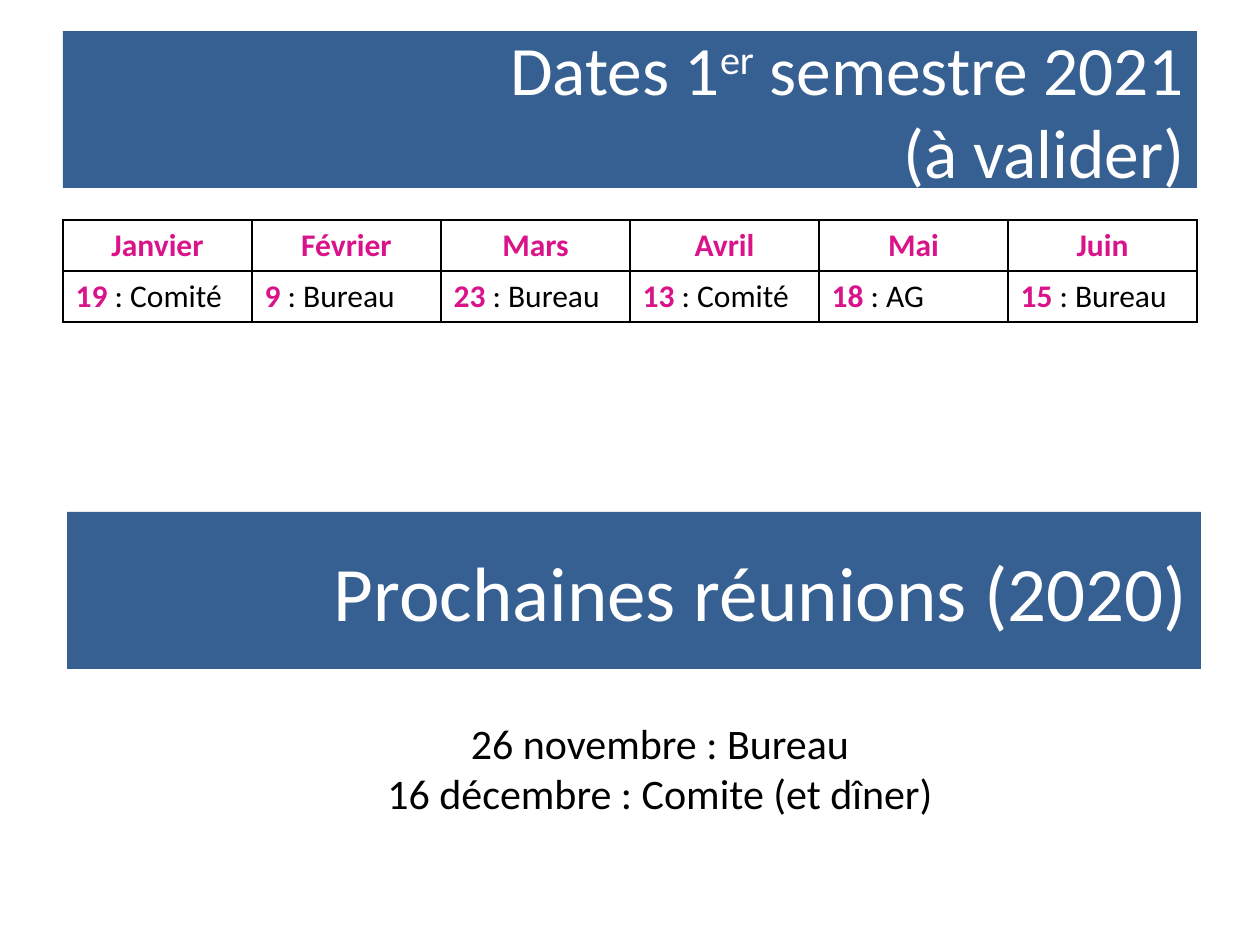
from dataclasses import dataclass

from lxml.etree import SubElement
from pptx import Presentation
from pptx.dml.color import RGBColor
from pptx.enum.shapes import MSO_SHAPE as Shape
from pptx.enum.text import MSO_ANCHOR as Anchor, MSO_AUTO_SIZE as AutoSize, PP_ALIGN as Align
from pptx.oxml.ns import qn
from pptx.util import Emu, Pt

PX_PER_INCH = 126


def px(length):
    return Emu(round(length * 914400 / PX_PER_INCH))


@dataclass(frozen=True)
class Theme:
    font: str = "Calibri"
    band: str = "376092"
    light: str = "FFFFFF"
    dark: str = "000000"
    accent: str = "D9138A"
    title: float = 44
    subtitle: float = 39.6
    body: float = 24
    table: float = 18
    border: float = 1


class SlideBuilder:
    def __init__(self, slide, theme):
        self.slide = slide
        self.theme = theme

    def format_run(self, run, size, color, bold=False):
        font = run.font
        font.name, font.size, font.bold = self.theme.font, Pt(size), bold
        font.color.rgb = RGBColor.from_string(color)

    def format_band(self, shape, size):
        """Blue band with white text set to the right."""
        shape.fill.solid()
        shape.fill.fore_color.rgb = RGBColor.from_string(self.theme.band)
        shape.line.fill.background()
        frame = shape.text_frame
        frame.word_wrap = True
        frame.auto_size = AutoSize.NONE
        frame.vertical_anchor = Anchor.MIDDLE
        for paragraph in frame.paragraphs:
            paragraph.alignment = Align.RIGHT
            for run in paragraph.runs:
                self.format_run(run, size, self.theme.light)

    def title(self, text, left, top, width, height):
        shape = self.slide.shapes.title
        shape.left, shape.top, shape.width, shape.height = map(px, (left, top, width, height))
        shape.text_frame.text = text
        self.format_band(shape, self.theme.title)

    def date_band(self, before, superscript, after, second_line, left, top, width, height):
        shape = self.slide.shapes.add_shape(Shape.RECTANGLE, *map(px, (left, top, width, height)))
        shape.shadow.inherit = False
        paragraph = shape.text_frame.paragraphs[0]
        for text in (before, superscript, after):
            paragraph.add_run().text = text
        paragraph.add_line_break()
        paragraph.add_run().text = second_line
        self.format_band(shape, self.theme.subtitle)
        paragraph.runs[1].font._element.set("baseline", "30000")

    def cell_borders(self, cell):
        properties = cell._tc.get_or_add_tcPr()
        for position, side in enumerate(("lnL", "lnR", "lnT", "lnB")):
            line = SubElement(properties, qn(f"a:{side}"), w=str(Pt(self.theme.border)))
            fill = SubElement(line, qn("a:solidFill"))
            SubElement(fill, qn("a:srgbClr"), val=self.theme.dark)
            properties.insert(position, line)

    def calendar(self, meetings, left, top, column_width, row_height):
        theme = self.theme
        count = len(meetings)
        table = self.slide.shapes.add_table(
            2, count, px(left), px(top), px(column_width * count), px(row_height * 2)).table
        table.first_row = table.horz_banding = False
        for row in table.rows:
            row.height = px(row_height)
        for column, (month, day, event) in enumerate(meetings):
            table.columns[column].width = px(column_width)
            for row, texts in enumerate(((month,), (day, event))):
                cell = table.cell(row, column)
                cell.fill.background()
                self.cell_borders(cell)
                paragraph = cell.text_frame.paragraphs[0]
                paragraph.alignment = Align.LEFT if row else Align.CENTER
                for text, color in zip(texts, (theme.accent, theme.dark)):
                    run = paragraph.add_run()
                    run.text = text
                    self.format_run(run, theme.table, color, color == theme.accent)

    def text(self, lines, left, top, width, height):
        box = self.slide.shapes.add_textbox(*map(px, (left, top, width, height)))
        frame = box.text_frame
        frame.word_wrap = True
        frame.auto_size = AutoSize.SHAPE_TO_FIT_TEXT
        frame.text = "\n".join(lines)
        for paragraph in frame.paragraphs:
            paragraph.alignment = Align.CENTER
            self.format_run(paragraph.runs[0], self.theme.body, self.theme.dark)


def main():
    presentation = Presentation()
    presentation.slide_width, presentation.slide_height = px(1260), px(945)
    title_only = presentation.slide_layouts[5]
    builder = SlideBuilder(presentation.slides.add_slide(title_only), Theme())

    # Band above the upcoming meetings
    builder.title("Prochaines réunions (2020)", 67, 512, 1134, 157)

    # Calendar of the first half-year
    meetings = [
        ("Janvier", "19", " : Comité"),
        ("Février", "9", " : Bureau"),
        ("Mars", "23 ", ": Bureau"),
        ("Avril", "13", " : Comité"),
        ("Mai", "18", " : AG"),
        ("Juin", "15 ", ": Bureau"),
    ]
    builder.calendar(meetings, 63, 220, 189, 51)
    builder.date_band("Dates 1", "er", " semestre 2021", "(à valider)", 63, 31, 1134, 157)

    # Upcoming meetings
    builder.text(["26 novembre : Bureau", "16 décembre : Comite (et dîner)"], 273, 711, 774, 115)

    presentation.save("out.pptx")


if __name__ == "__main__":
    main()
